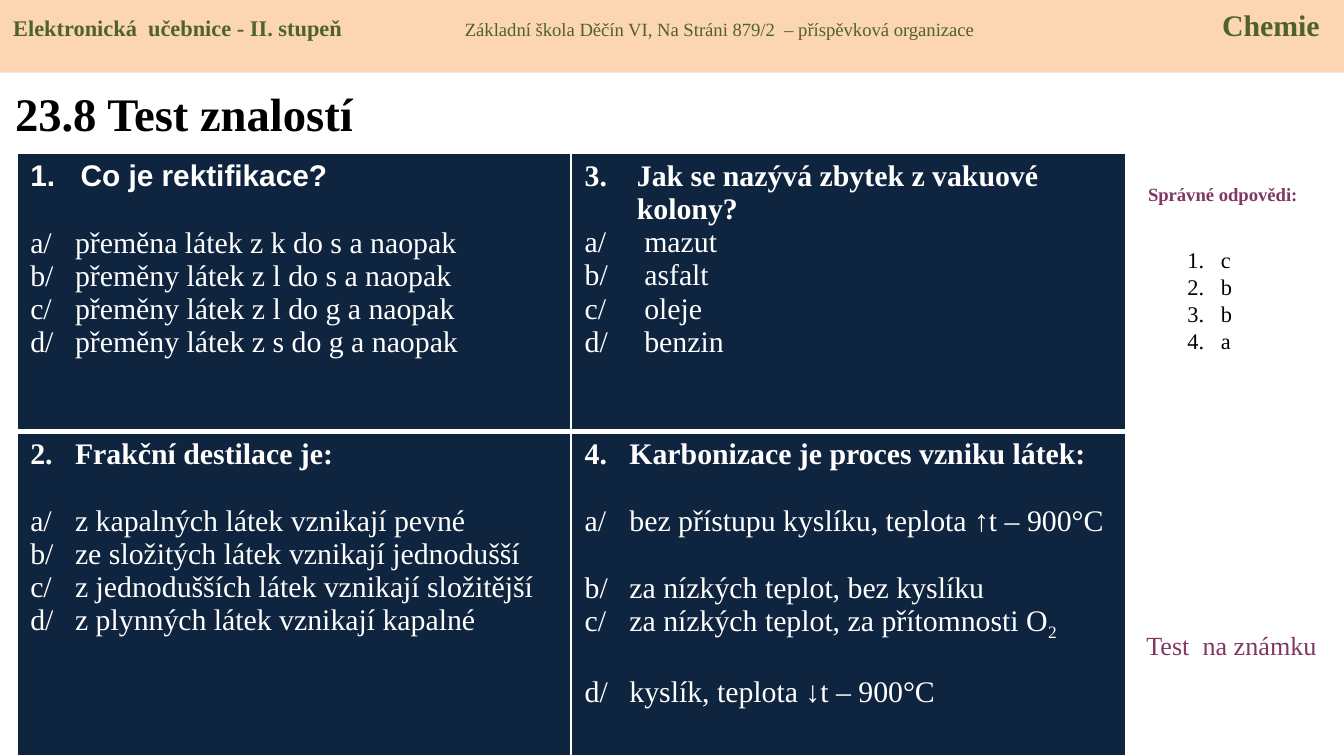
import pptx
import pptx.dml.color
import pptx.enum.shapes
import pptx.enum.text
import pptx.oxml.ns
import pptx.util
from lxml import etree

Pt = pptx.util.Pt
PP_ALIGN = pptx.enum.text.PP_ALIGN
ANCHOR = pptx.enum.text.MSO_ANCHOR
COLORS = {"black": "000000", "white": "FFFFFF", "navy": "0F243E",
          "peach": "FCD5B5", "green": "4F6228", "plum": "813763"}
LINE = 18  # one line of 16 pt text

# heading, heading font, heading indent, gap below it, answer indent, answers;
# each answer is its text, an optional subscript and the gap below
QUESTIONS = [
    [("1.\tCo je rektifikace?", "Arial", 27, LINE, 24,
      [("a/\tpřeměna látek z k do s a naopak", "", 0),
       ("b/\tpřeměny látek z l do s a naopak", "", 0),
       ("c/\tpřeměny látek z l do g a naopak", "", 0),
       ("d/\tpřeměny látek z s do g a naopak", "", 0)]),
     ("3.\tJak se nazývá zbytek z vakuové kolony?", "Times New Roman", 28, 0, 32,
      [("a/\tmazut", "", 0),
       ("b/\tasfalt", "", 0),
       ("c/\toleje", "", 0),
       ("d/\tbenzin", "", 0)])],
    [("2.\tFrakční destilace je:", "Times New Roman", 24, LINE, 24,
      [("a/\tz kapalných látek vznikají pevné", "", 0),
       ("b/\tze složitých látek vznikají jednodušší", "", 0),
       ("c/\tz jednodušších látek vznikají složitější", "", 0),
       ("d/\tz plynných látek vznikají kapalné", "", 0)]),
     ("4.\tKarbonizace je proces vzniku látek:", "Times New Roman", 24, LINE, 24,
      [("a/\tbez přístupu kyslíku, teplota ↑t – 900°C", "", LINE),
       ("b/\tza nízkých teplot, bez kyslíku", "", 0),
       ("c/\tza nízkých teplot, za přítomnosti O", "2", LINE),
       ("d/\tkyslík, teplota ↓t – 900°C", "", 0)])],
]


def rgb(name):
    return pptx.dml.color.RGBColor.from_string(COLORS[name])


def add_xml(parent, tag, **attrs):
    return etree.SubElement(parent, pptx.oxml.ns.qn(tag), attrs)


class Deck:
    def __init__(self, width, height):
        self.font = "Times New Roman"
        self.prs = pptx.Presentation()
        self.prs.slide_width, self.prs.slide_height = Pt(width), Pt(height)
        self.s = self.prs.slides.add_slide(self.prs.slide_layouts[6])

    def run(self, p, text, size, color, bold=False, font=None, baseline=None):
        r = p.add_run()
        r.text = text
        r.font.name = font or self.font
        r.font.size, r.font.bold = Pt(size), bold
        r.font.color.rgb = rgb(color)
        if baseline:
            r.font._element.set("baseline", str(baseline))

    def indent(self, p, width):
        """Hang the first line of a paragraph by width."""
        pPr = p._p.get_or_add_pPr()
        pPr.set("marL", str(Pt(width)))
        pPr.set("indent", str(-Pt(width)))
        return pPr

    def paragraph(self, tf, first):
        return tf.paragraphs[0] if first else tf.add_paragraph()

    def box(self, x, y, w, h):
        tf = self.s.shapes.add_textbox(Pt(x), Pt(y), Pt(w), Pt(h)).text_frame
        tf.word_wrap = True
        return tf

    def label(self, x, y, w, h, text, size, color, bold=False,
              align=PP_ALIGN.LEFT, anchor=ANCHOR.TOP):
        tf = self.box(x, y, w, h)
        tf.vertical_anchor = anchor
        p = tf.paragraphs[0]
        p.alignment = align
        self.run(p, text, size, color, bold)

    def numbered_list(self, x, y, w, h, items, size, color):
        tf = self.box(x, y, w, h)
        tf.margin_top = Pt(19)
        for i, item in enumerate(items):
            p = self.paragraph(tf, i == 0)
            add_xml(self.indent(p, 18), "a:buAutoNum", type="arabicPeriod")
            self.run(p, item, size, color)

    def banner(self, w, h, fill, color, runs, tabs):
        """Draw the top bar; tabs are (position, alignment) of the later runs."""
        sp = self.s.shapes.add_shape(
            pptx.enum.shapes.MSO_SHAPE.RECTANGLE, 0, 0, Pt(w), Pt(h))
        sp.shadow.inherit = False
        sp.fill.solid()
        sp.fill.fore_color.rgb = rgb(fill)
        sp.line.fill.background()
        tf = sp.text_frame
        tf.word_wrap = True
        tf.vertical_anchor = ANCHOR.TOP
        p = tf.paragraphs[0]
        p.alignment = PP_ALIGN.LEFT
        tab_list = add_xml(p._p.get_or_add_pPr(), "a:tabLst")
        for pos, align in tabs:
            add_xml(tab_list, "a:tab", pos=str(Pt(pos)), algn=align)
        for text, size, bold in runs:
            self.run(p, text, size, color, bold)

    def borders(self, cell, bottom):
        tcPr = cell._tc.get_or_add_tcPr()
        for side, width in (("L", 1), ("R", 1), ("T", 1), ("B", bottom)):
            ln = add_xml(tcPr, f"a:ln{side}", w=str(Pt(width)))
            add_xml(add_xml(ln, "a:solidFill"), "a:srgbClr", val=COLORS["white"])

    def question(self, cell, heading, font, indent, gap, answer_indent, answers):
        tf = cell.text_frame
        p = self.paragraph(tf, True)
        self.indent(p, indent)
        p.space_after = Pt(gap)
        self.run(p, heading, 16, "white", True, font)
        for text, subscript, gap_below in answers:
            p = self.paragraph(tf, False)
            self.indent(p, answer_indent)
            p.space_after = Pt(gap_below)
            self.run(p, text, 16, "white")
            if subscript:
                self.run(p, subscript, 16, "white", baseline=-25000)

    def quiz_table(self, x, y, col_width, row_heights, questions):
        table = self.s.shapes.add_table(
            len(questions), len(questions[0]), Pt(x), Pt(y),
            Pt(col_width * len(questions[0])), Pt(sum(row_heights))).table
        for col in table.columns:
            col.width = Pt(col_width)
        for i, (row, height) in enumerate(zip(questions, row_heights)):
            table.rows[i].height = Pt(height)
            for j, question in enumerate(row):
                cell = table.cell(i, j)
                self.borders(cell, 3 if i == 0 else 1)
                cell.fill.solid()
                cell.fill.fore_color.rgb = rgb("navy")
                self.question(cell, *question)


def main():
    deck = Deck(720, 405)
    deck.label(1, 39, 230, 43, "23.8 Test znalostí", 25, "black", True,
               anchor=ANCHOR.MIDDLE)
    deck.label(604, 94.5, 102, 19.5, "Správné odpovědi:", 10, "plum", True,
               align=PP_ALIGN.CENTER)
    deck.quiz_table(9, 82, 297, (149, 174), QUESTIONS)
    deck.numbered_list(629, 113, 40, 94, "cbba", 12, "black")
    deck.label(607, 333.5, 113, 24.5, "Test  na známku", 14, "plum")
    deck.banner(720, 39, "peach", "green", [
        ("Elektronická  učebnice - II. stupeň\t", 12, True),
        ("Základní škola Děčín VI, Na Stráni 879/2  – příspěvková organizace\t",
         10, False),
        ("Chemie", 16, True)], [(242, "l"), (700, "r")])
    deck.prs.save("out.pptx")


if __name__ == "__main__":
    main()
